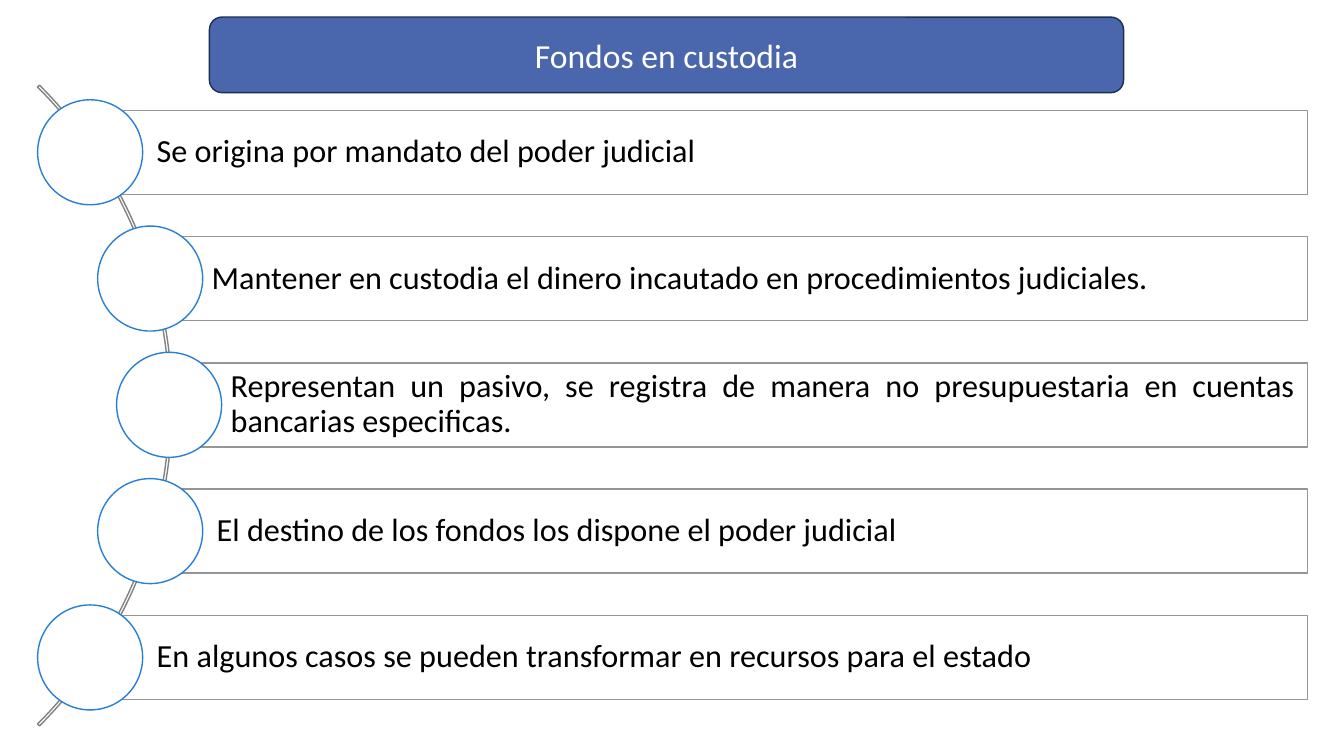
from dataclasses import dataclass
from pptx import Presentation
from pptx.dml.color import RGBColor
from pptx.enum.shapes import MSO_SHAPE
from pptx.enum.text import MSO_ANCHOR, PP_ALIGN
from pptx.util import Pt


@dataclass(frozen=True)
class Theme:
    font: str = "Calibri"
    head: int = 24
    body: int = 23
    white: str = "FFFFFF"
    black: str = "000000"
    blue: str = "4A66AC"
    navy: str = "1C3052"
    ring: str = "297FD5"
    edge: str = "959595"
    arc: str = "828282"


THEME = Theme()
RIGHT = 933.8
MIDDLE = 289.2
PITCH = 90.2
BAR = 60
DOT = 75
ARC = 647.2

ROWS = [
    (64.4, 0, "Se origina por mandato del poder judicial"),
    (107.3, 3.6, "Mantener en custodia el dinero incautado en procedimientos judiciales."),
    (120.8, 3.6, "Representan un pasivo, se registra de manera no presupuestaria "
                 "en cuentas bancarias especificas."),
    (107.3, 0, "El destino de los fondos los dispone el poder judicial"),
    (64.4, 0, "En algunos casos se pueden transformar en recursos para el estado"),
]


def add_form(slide, kind, box, line, fill=None):
    form = slide.shapes.add_shape(kind, *[Pt(size) for size in box])
    form.shadow.inherit = False
    form.line.color.rgb = RGBColor.from_string(line)
    form.line.width = Pt(1)
    if fill:
        form.fill.solid()
        form.fill.fore_color.rgb = RGBColor.from_string(fill)
    else:
        form.fill.background()
    return form


def write(form, text, size, color, align, insets):
    frame = form.text_frame
    frame.text = text
    frame.word_wrap = True
    frame.vertical_anchor = MSO_ANCHOR.MIDDLE
    (frame.margin_left, frame.margin_top,
     frame.margin_right, frame.margin_bottom) = [Pt(gap) for gap in insets]
    line = frame.paragraphs[0]
    line.alignment = align
    font = line.runs[0].font
    font.name = THEME.font
    font.size = Pt(size)
    font.color.rgb = RGBColor.from_string(color)
    return line


def add_arc(slide):
    box = (-524.2, MIDDLE + 0.5 - ARC / 2, ARC, ARC)
    arc = add_form(slide, MSO_SHAPE.BLOCK_ARC, box, THEME.arc)
    for index, value in enumerate((189, 27, 0.003)):
        arc.adjustments[index] = value


def add_row(slide, center, left, shift, text):
    box = (left, center - BAR / 2, RIGHT - left, BAR)
    bar = add_form(slide, MSO_SHAPE.RECTANGLE, box, THEME.edge, THEME.white)
    insets = (47.5 - shift, 4.3, 4.3 + shift, 4.3)
    line = write(bar, text, THEME.body, THEME.black, PP_ALIGN.JUSTIFY, insets)
    line.line_spacing = 0.9
    box = (left - DOT / 2, center - DOT / 2, DOT, DOT)
    add_form(slide, MSO_SHAPE.OVAL, box, THEME.ring, THEME.white)


def add_title(slide, text):
    box = (149.6, 12.2, 653, 54)
    title = add_form(slide, MSO_SHAPE.ROUNDED_RECTANGLE, box, THEME.navy, THEME.blue)
    write(title, text, THEME.head, THEME.white, PP_ALIGN.CENTER, (7.2, 3.6, 7.2, 3.6))


def main():
    deck = Presentation()
    deck.slide_width = Pt(960)
    deck.slide_height = Pt(540)
    slide = deck.slides.add_slide(deck.slide_layouts[6])
    add_arc(slide)
    for index, (left, shift, text) in enumerate(ROWS):
        center = MIDDLE + (index - len(ROWS) // 2) * PITCH
        add_row(slide, center, left, shift, text)
    add_title(slide, "Fondos en custodia")
    deck.save("out.pptx")


if __name__ == "__main__":
    main()
